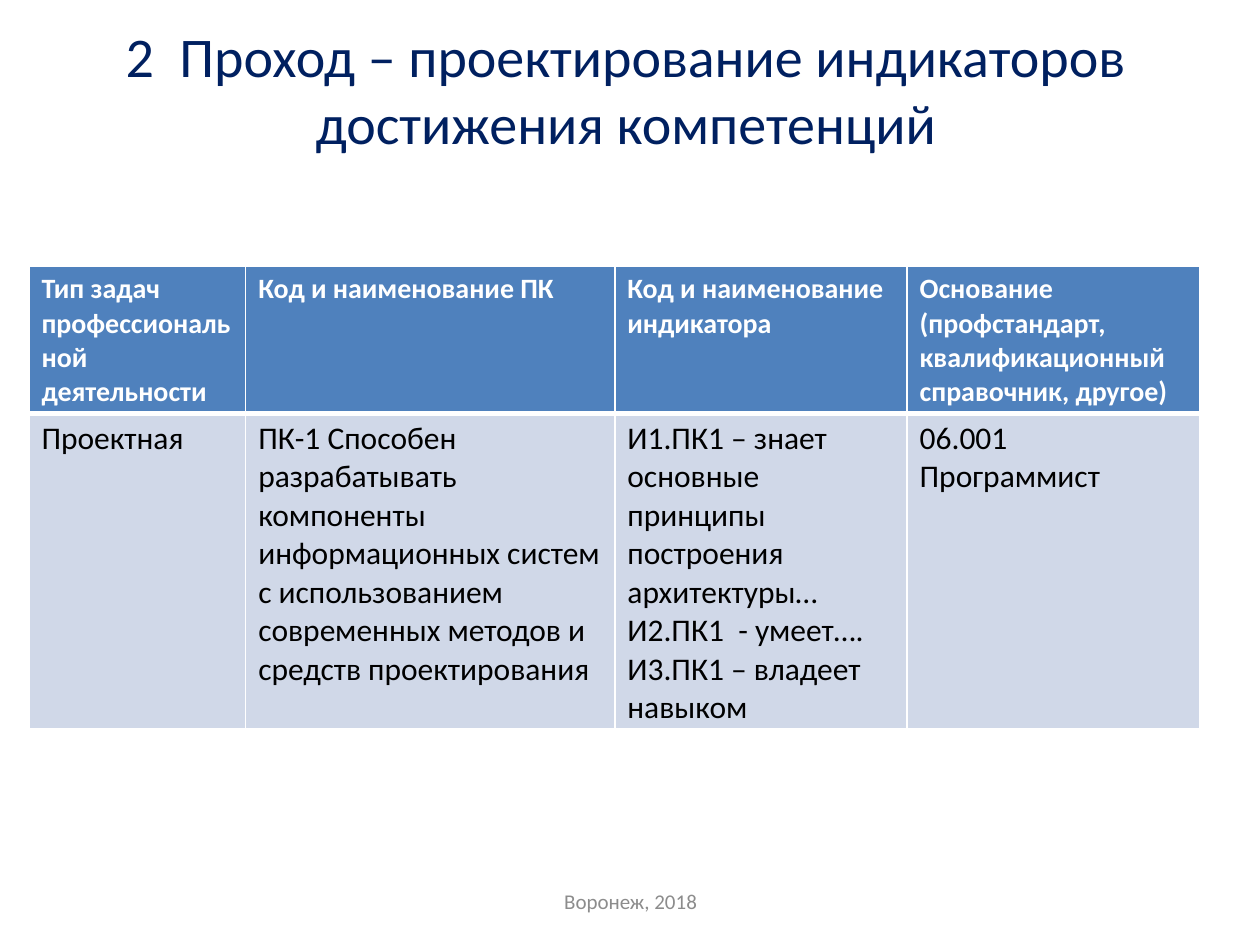
from dataclasses import dataclass

from lxml.etree import SubElement
from pptx import Presentation
from pptx.dml.color import RGBColor
from pptx.enum.text import MSO_ANCHOR, PP_ALIGN
from pptx.oxml.ns import qn
from pptx.util import Inches, Pt


@dataclass(frozen=True)
class Theme:
    font: str = "Calibri"
    navy: str = "002060"
    gray: str = "8C8C8C"
    blue: str = "4F81BD"
    pale: str = "D0D8E8"
    white: str = "FFFFFF"
    black: str = "000000"
    title: int = 32
    head: int = 16
    body: int = 18
    foot: int = 12
    thin: int = 1
    thick: int = 3


@dataclass(frozen=True)
class Label:
    text: str
    box: tuple[float, float, float, float]
    size: int
    color: str


@dataclass(frozen=True)
class Row:
    texts: tuple[str, ...]
    height: float
    fill: str
    size: int
    color: str
    bold: bool
    top: int
    bottom: int


THEME = Theme()
WIDTHS = (1.72, 2.93, 2.32, 2.32)
LABELS = (
    Label("2  Проход – проектирование индикаторов достижения компетенций",
          (0.47, 0.16, 9, 1.09), THEME.title, THEME.navy),
    Label("Воронеж, 2018", (3.42, 6.95, 3.17, 0.4), THEME.foot, THEME.gray),
)
ROWS = (
    Row(("Тип задач профессиональной деятельности",
         "Код и наименование ПК",
         "Код и наименование индикатора",
         "Основание (профстандарт, квалификационный справочник, другое)"),
        1.17, THEME.blue, THEME.head, THEME.white, True, THEME.thin, THEME.thick),
    Row(("Проектная",
         "ПК-1 Способен разрабатывать компоненты информационных систем "
         "с использованием современных методов и средств проектирования",
         "И1.ПК1 – знает основные принципы построения архитектуры…\n"
         "И2.ПК1  - умеет….\n"
         "И3.ПК1 – владеет навыком",
         "06.001 Программист"),
        2.5, THEME.pale, THEME.body, THEME.black, False, THEME.thick, THEME.thin),
)


def write(frame, text: str, *, size: int, color: str, bold: bool = False,
          align=PP_ALIGN.LEFT) -> None:
    frame.word_wrap = True
    frame.text = text
    for par in frame.paragraphs:
        par.alignment = align
        for run in par.runs:
            run.font.name = THEME.font
            run.font.size = Pt(size)
            run.font.bold = bold
            run.font.color.rgb = RGBColor.from_string(color)


def border(cell, top: int, bottom: int) -> None:
    props = cell._tc.get_or_add_tcPr()
    sides = {"L": THEME.thin, "R": THEME.thin, "T": top, "B": bottom}
    for side, width in sides.items():
        line = SubElement(props, qn(f"a:ln{side}"), w=str(Pt(width)))
        fill = SubElement(line, qn("a:solidFill"))
        SubElement(fill, qn("a:srgbClr"), val=THEME.white)


def label(slide, item: Label) -> None:
    frame = slide.shapes.add_textbox(*map(Inches, item.box)).text_frame
    frame.vertical_anchor = MSO_ANCHOR.MIDDLE
    write(frame, item.text, size=item.size, color=item.color, align=PP_ALIGN.CENTER)


def grid(slide, rows: tuple[Row, ...]) -> None:
    height = sum(row.height for row in rows)
    table = slide.shapes.add_table(
        len(rows), len(WIDTHS), Inches(0.23), Inches(2.11),
        Inches(sum(WIDTHS)), Inches(height)).table
    for column, width in zip(table.columns, WIDTHS):
        column.width = Inches(width)
    for line, row in zip(table.rows, rows):
        line.height = Inches(row.height)
        for cell, text in zip(line.cells, row.texts):
            border(cell, row.top, row.bottom)
            cell.fill.solid()
            cell.fill.fore_color.rgb = RGBColor.from_string(row.fill)
            write(cell.text_frame, text, size=row.size, color=row.color, bold=row.bold)


def main() -> None:
    """Build the slide on competence indicators."""
    deck = Presentation()
    deck.slide_width, deck.slide_height = Inches(10), Inches(7.5)
    slide = deck.slides.add_slide(deck.slide_layouts[6])
    for item in LABELS:
        label(slide, item)
    grid(slide, ROWS)
    deck.save("out.pptx")


if __name__ == "__main__":
    main()
